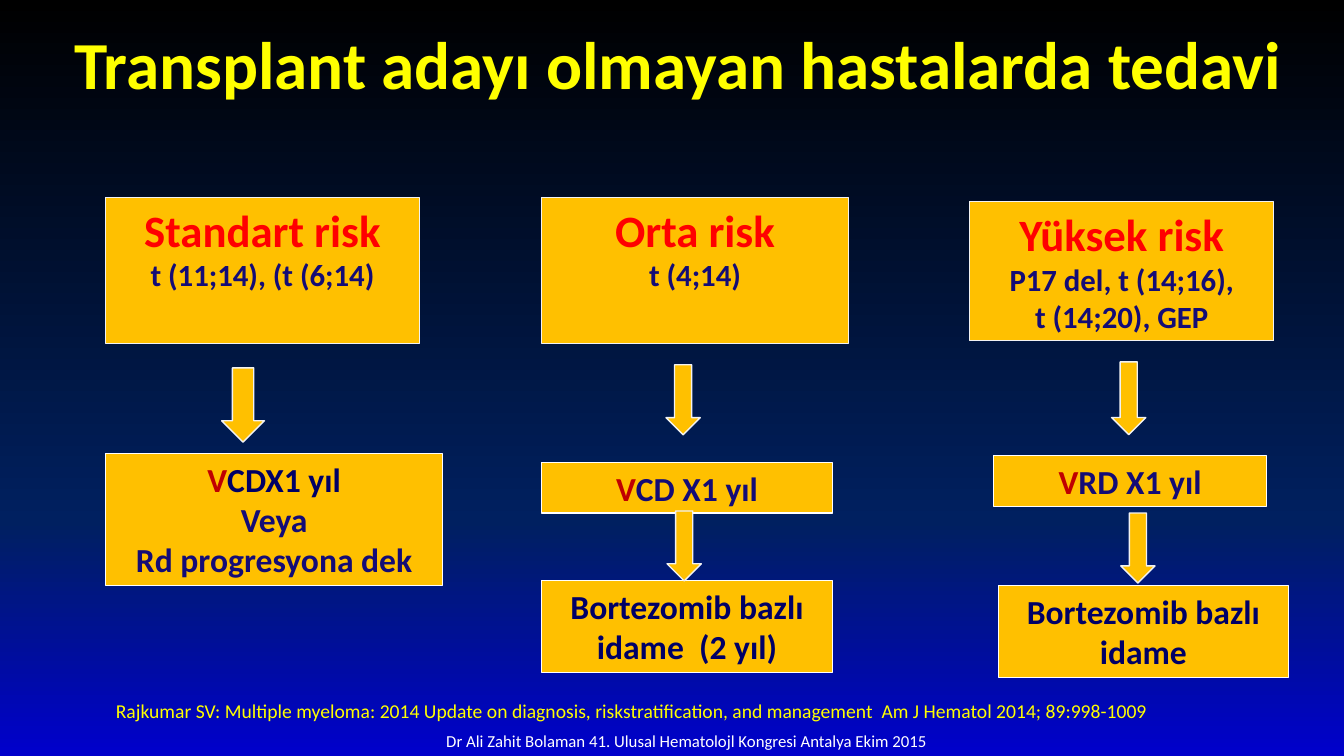
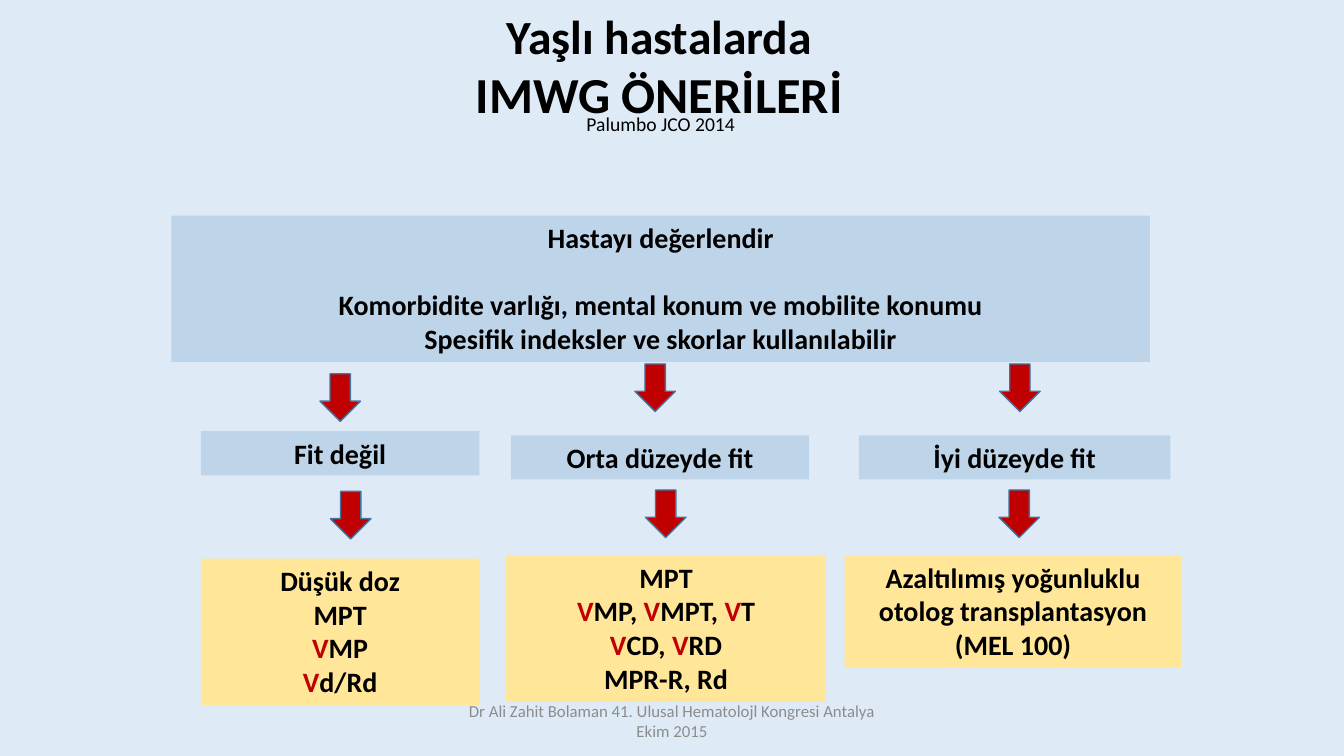
from dataclasses import dataclass
from copy import deepcopy
from typing import Any, Optional

from pptx import Presentation
from pptx.dml.color import RGBColor
from pptx.enum.shapes import MSO_SHAPE as Form
from pptx.enum.text import MSO_ANCHOR as Anchor, MSO_AUTO_SIZE as Fit, PP_ALIGN as Align
from pptx.util import Pt

BLACK = RGBColor(0x00, 0x00, 0x00)
WHITE = RGBColor(0xFF, 0xFF, 0xFF)
PALE = RGBColor(0xF2, 0xF2, 0xF2)
GRAY = RGBColor(0x8C, 0x8C, 0x8C)
YELLOW = RGBColor(0xFF, 0xFF, 0x00)
GOLD = RGBColor(0xFF, 0xC0, 0x00)
CREAM = RGBColor(0xFF, 0xE6, 0x99)
RED = RGBColor(0xFF, 0x00, 0x00)
DARK = RGBColor(0xC0, 0x00, 0x00)
INK = RGBColor(0x14, 0x0C, 0x76)
NAVY = RGBColor(0x00, 0x00, 0x66)
NIGHT = RGBColor(0x00, 0x20, 0x60)
BLUE = RGBColor(0x00, 0x00, 0xCC)
STEEL = RGBColor(0x43, 0x73, 0x9E)
SKY = RGBColor(0xBD, 0xD4, 0xE9)
ICE = RGBColor(0xDE, 0xEB, 0xF7)

FONT = "Calibri"
FOOTER = "Dr Ali Zahit Bolaman 41. Ulusal Hematolojl Kongresi Antalya Ekim 2015"
FRAME = {"word_wrap": True, "auto_size": Fit.NONE, "vertical_anchor": Anchor.TOP}


@dataclass(frozen=True)
class Look:
    fill: RGBColor
    line: Optional[RGBColor] = None
    width: float = 1


@dataclass(frozen=True)
class Row:
    text: str
    size: float = 20
    color: RGBColor = BLACK
    bold: bool = True
    gap: float = 0


@dataclass(frozen=True)
class Area:
    x: float
    y: float
    w: float
    h: float

    def spots(self) -> tuple:
        return Pt(self.x), Pt(self.y), Pt(self.w), Pt(self.h)


@dataclass(frozen=True)
class Box:
    area: Area
    look: Look
    rows: tuple[Row, ...] = ()
    form: Form = Form.RECTANGLE


GOLD_BOX = Look(GOLD, WHITE, 0.75)
GOLD_TOP = Look(GOLD, PALE, 0.75)
GOLD_ARROW = Look(GOLD, PALE)
RED_ARROW = Look(DARK, STEEL)
SKY_BOX = Look(SKY)
CREAM_BOX = Look(CREAM)


def put(item: Any, **values: Any) -> None:
    for name, value in values.items():
        setattr(item, name, value)


def write(shape: Any, rows: tuple[Row, ...], align: Align = Align.CENTER, **frame: Any) -> None:
    body = shape.text_frame
    put(body, **(FRAME | frame))
    for spot, row in enumerate(rows):
        para = body.add_paragraph() if spot else body.paragraphs[0]
        put(para, alignment=align, space_before=Pt(row.gap), line_spacing=1.0)
        for turn, piece in enumerate(row.text.split("*")):
            if piece:
                run = para.add_run()
                run.text = piece
                put(run.font, name=FONT, size=Pt(row.size), bold=row.bold)
                run.font.color.rgb = DARK if turn % 2 else row.color


def draw(slide: Any, box: Box) -> None:
    shape = slide.shapes.add_shape(box.form, *box.area.spots())
    shape.shadow.inherit = False
    shape.fill.solid()
    shape.fill.fore_color.rgb = box.look.fill
    if box.look.line is None:
        shape.line.fill.background()
    else:
        shape.line.color.rgb = box.look.line
        shape.line.width = Pt(box.look.width)
    write(shape, box.rows)


def label(slide: Any, area: Area, row: Row, align: Align = Align.CENTER, **frame: Any) -> None:
    write(slide.shapes.add_textbox(*area.spots()), (row,), align, **frame)


def start(deck: Any, area: Area, *rows: Row) -> Any:
    slide = deck.slides.add_slide(deck.slide_layouts[5])
    title = slide.shapes.title
    put(title, **dict(zip(("left", "top", "width", "height"), area.spots())))
    write(title, rows)
    return slide


def footer(slide: Any, area: Area, color: RGBColor) -> None:
    label(slide, area, Row(FOOTER, 12, color, False), vertical_anchor=Anchor.MIDDLE)


def arrow(x: float, y: float, w: float, h: float, look: Look) -> Box:
    return Box(Area(x, y, w, h), look, form=Form.DOWN_ARROW)


def risk(area: Area, name: str, *notes: str) -> Box:
    return Box(area, GOLD_TOP, (Row(name, 32, RED), *(Row(note, 22, INK) for note in notes)))


def care(area: Area, *texts: str, color: RGBColor = INK) -> Box:
    return Box(area, GOLD_BOX, tuple(Row(text, 24, color) for text in texts))


def plain(area: Area, look: Look, *texts: str) -> Box:
    return Box(area, look, tuple(Row(text) for text in texts))


def shade(slide: Any) -> None:
    fill = slide.background.fill
    fill.gradient()
    fill.gradient_angle = 270
    stops = slide.element.xpath(".//a:gsLst")[0]
    stops.append(deepcopy(stops[-1]))
    tones = ((0, BLACK), (0.69, NIGHT), (1, BLUE))
    for stop, (place, color) in zip(fill.gradient_stops, tones):
        stop.position = place
        stop.color.rgb = color


def risks(deck: Any) -> None:
    slide = start(deck, Area(30, 12, 909, 66),
                  Row("Transplant adayı olmayan hastalarda tedavi", 48, YELLOW))
    shade(slide)
    boxes = (
        risk(Area(75.6, 141, 224, 104.5), "Standart risk", "t (11;14), (t (6;14)"),
        risk(Area(387, 141, 219, 104.5), "Orta risk", "t (4;14)"),
        risk(Area(692.5, 144, 217.5, 99.5), "Yüksek risk", "P17 del, t (14;16),", "t (14;20), GEP"),
        Box(Area(75.6, 324, 240.5, 94.5), GOLD_BOX,
            (Row("*V*CDX1 yıl", 24, NAVY), Row("Veya", 24, INK),
             Row("Rd progresyona dek", 24, INK))),
        care(Area(387, 330.5, 207.5, 36), "*V*CD X1 yıl"),
        care(Area(710, 325.5, 194.5, 36), "*V*RD X1 yıl"),
        care(Area(387, 414.7, 207.5, 65.5), "Bortezomib bazlı idame  (2 yıl)", color=NAVY),
        care(Area(713, 418.3, 207.5, 65.5), "Bortezomib bazlı idame", color=NAVY),
        arrow(158.4, 262.8, 30.5, 53, GOLD_ARROW),
        arrow(475.7, 260.6, 24.5, 50, GOLD_ARROW),
        arrow(794, 258.5, 24.5, 52, GOLD_ARROW),
        arrow(476.5, 365, 24.5, 50, GOLD_ARROW),
        arrow(800.6, 366.5, 24.5, 50, GOLD_ARROW),
    )
    for box in boxes:
        draw(slide, box)
    label(slide, Area(75.6, 496, 802, 24.5),
          Row("Rajkumar SV: Multiple myeloma: 2014 Update on diagnosis, riskstratification, "
              "and management  Am J Hematol 2014; 89:998-1009", 14, YELLOW, False), Align.LEFT)
    footer(slide, Area(293, 518, 395, 22), WHITE)


def advice(deck: Any) -> None:
    slide = start(deck, Area(0, 1, 942, 92),
                  Row("Yaşlı hastalarda", 34), Row("IMWG ÖNERİLERİ", 36))
    slide.background.fill.solid()
    slide.background.fill.fore_color.rgb = ICE
    label(slide, Area(411, 76.5, 122, 24.5), Row("Palumbo JCO 2014", 14, bold=False), word_wrap=False)
    boxes = (
        Box(Area(122.4, 154, 699, 104.5), SKY_BOX,
            (Row("Hastayı değerlendir"),
             Row("Komorbidite varlığı, mental konum ve mobilite konumu", gap=24),
             Row("Spesifik indeksler ve skorlar kullanılabilir"))),
        plain(Area(143.5, 308, 199, 31.5), SKY_BOX, "Fit değil"),
        plain(Area(365, 311, 213, 31.5), SKY_BOX, "Orta düzeyde fit"),
        plain(Area(613.5, 311, 222.5, 31.5), SKY_BOX, "İyi düzeyde fit"),
        plain(Area(143.5, 399, 199, 104.5), CREAM_BOX, "Düşük doz", "MPT", "*V*MP", "*V*d/Rd"),
        plain(Area(361.5, 396.7, 228.5, 104.5), CREAM_BOX,
              "MPT", "*V*MP, *V*MPT, *V*T", "*V*CD, *V*RD", "MPR-R, Rd"),
        plain(Area(603.4, 396.7, 240.5, 80), CREAM_BOX,
              "Azaltılımış yoğunluklu otolog transplantasyon (MEL 100)"),
    )
    spots = ((228.5, 267), (453.5, 260), (714, 260), (236, 351), (461, 350), (713.5, 350))
    for box in (*boxes, *(arrow(x, y, 29, 34, RED_ARROW) for x, y in spots)):
        draw(slide, box)
    footer(slide, Area(318, 500.5, 324, 29), GRAY)


def main() -> None:
    deck = Presentation()
    put(deck, slide_width=Pt(960), slide_height=Pt(540))
    risks(deck)
    advice(deck)
    deck.save("out.pptx")


if __name__ == "__main__":
    main()
